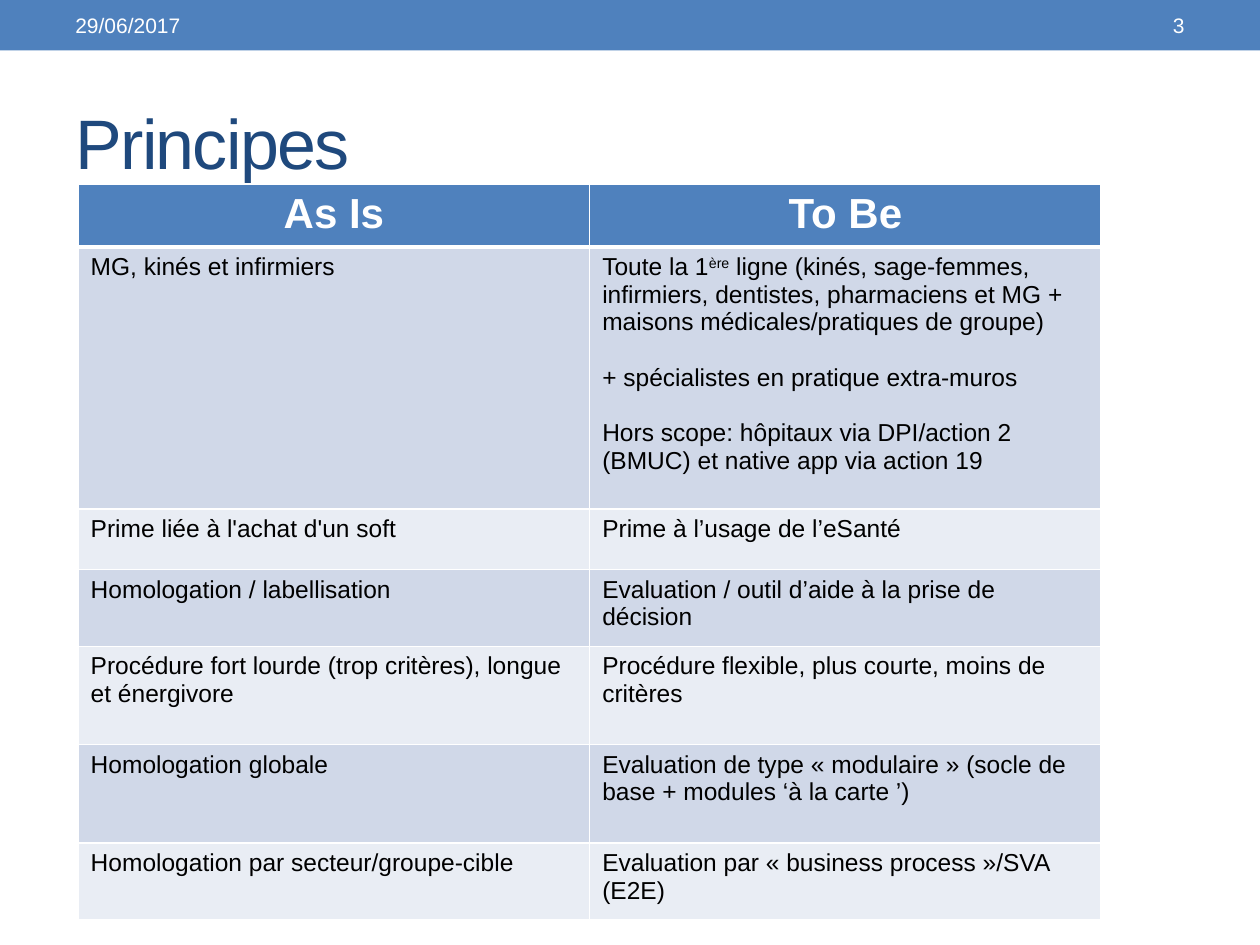
import pptx
import pptx.util
import pptx.dml.color
import pptx.enum.shapes
import pptx.enum.text
import pptx.oxml
import pptx.oxml.ns
from dataclasses import dataclass

Inches = pptx.util.Inches
Pt = pptx.util.Pt
Align = pptx.enum.text.PP_ALIGN
Anchor = pptx.enum.text.MSO_ANCHOR


@dataclass(frozen=True)
class Theme:
    font: str = "Arial"
    blue: str = "4F81BD"
    navy: str = "1F497D"
    white: str = "FFFFFF"
    black: str = "000000"
    bands: tuple = ("D0D8E8", "E9EDF4")
    title: int = 40
    head: int = 24
    body: int = 14
    small: int = 12
    gap: int = 16  # space between paragraphs of a cell


theme = Theme()

HEADS = ("As Is", "To Be")
# A cell is a list of paragraphs; a tuple is text, raised text, text
ROWS = [
    (["MG, kinés et infirmiers"],
     [("Toute la 1", "ère", " ligne (kinés, sage-femmes, infirmiers, dentistes, "
       "pharmaciens et MG + maisons médicales/pratiques de groupe)"),
      "+ spécialistes en pratique extra-muros",
      "Hors scope: hôpitaux via DPI/action 2 (BMUC) et native app via action 19"]),
    (["Prime liée à l'achat d'un soft"], ["Prime à l’usage de l’eSanté"]),
    (["Homologation / labellisation"],
     ["Evaluation / outil d’aide à la prise de décision"]),
    (["Procédure fort lourde (trop critères), longue et énergivore"],
     ["Procédure flexible, plus courte, moins de critères"]),
    (["Homologation globale"],
     ["Evaluation de type « modulaire » (socle de base + modules ‘à la carte ’)"]),
    (["Homologation par secteur/groupe-cible"],
     ["Evaluation par « business process »/SVA (E2E)"]),
]
HEIGHTS = (0.49, 2.08, 0.48, 0.61, 0.78, 0.78, 0.61)


def rgb(code):
    return pptx.dml.color.RGBColor.from_string(code)


def paint(part, code):
    part.fill.solid()
    part.fill.fore_color.rgb = rgb(code)


def style(run, size, color, bold=False):
    for key, val in {"name": theme.font, "size": Pt(size), "bold": bold}.items():
        setattr(run.font, key, val)
    run.font.color.rgb = rgb(color)


def label(slide, box, text, align):
    """Small white text in the top band."""
    frame = slide.shapes.add_textbox(*map(Inches, box)).text_frame
    frame.word_wrap = True
    frame.vertical_anchor = Anchor.MIDDLE
    para = frame.paragraphs[0]
    para.alignment = align
    run = para.add_run()
    run.text = text
    style(run, theme.small, theme.white)


def banner(slide, box, date, num):
    """Band with the date at left and the page number at right."""
    left, top, width, height = box
    band = slide.shapes.add_shape(
        pptx.enum.shapes.MSO_SHAPE.RECTANGLE, *map(Inches, box))
    band.shadow.inherit = False
    paint(band, theme.blue)
    band.line.fill.background()
    side, inset = 0.5, 0.02
    tall = height - 2 * inset
    label(slide, (left + side, top + inset, 3.17, tall), date, Align.LEFT)
    label(slide, (left + width - side - 1.17, top + inset, 1.17, tall),
          num, Align.RIGHT)


def heading(slide, box, text):
    """Slide title in its placeholder."""
    title = slide.shapes.title
    for key, val in zip(("left", "top", "width", "height"), box):
        setattr(title, key, Inches(val))
    frame = title.text_frame
    frame.auto_size = pptx.enum.text.MSO_AUTO_SIZE.NONE
    frame.vertical_anchor = Anchor.MIDDLE
    para = frame.paragraphs[0]
    para.alignment = Align.LEFT
    run = para.add_run()
    run.text = text
    style(run, theme.title, theme.navy)
    run.font._element.set("spc", "-100")


def border(cell, top, low):
    """White lines round a cell, with widths in points."""
    props = cell._tc.get_or_add_tcPr()
    space = pptx.oxml.ns.nsdecls("a")
    sides = {"L": 1, "R": 1, "T": top, "B": low}
    for spot, (side, width) in enumerate(sides.items()):
        props.insert(spot, pptx.oxml.parse_xml(
            f'<a:ln{side} {space} w="{Pt(width)}"><a:solidFill>'
            f'<a:srgbClr val="{theme.white}"/></a:solidFill></a:ln{side}>'))


def write(cell, paras, size, color, bold=False, align=Align.LEFT):
    frame = cell.text_frame
    for spot, text in enumerate(paras):
        para = frame.add_paragraph() if spot else frame.paragraphs[0]
        para.alignment = align
        if spot:
            para.space_before = Pt(theme.gap)
        bits = text if isinstance(text, tuple) else (text,)
        for turn, bit in enumerate(bits):
            run = para.add_run()
            run.text = bit
            style(run, size, color, bold)
            if turn == 1:
                run.font._element.set("baseline", "30000")


def compare(slide, box):
    """Two-column table: a header, then rows in alternating bands."""
    grid = slide.shapes.add_table(
        len(ROWS) + 1, len(HEADS), *map(Inches, box)).table
    for col in grid.columns:
        col.width = Inches(box[2] / len(HEADS))
    for row, tall in zip(grid.rows, HEIGHTS):
        row.height = Inches(tall)
    for spot, text in enumerate(HEADS):
        cell = grid.cell(0, spot)
        paint(cell, theme.blue)
        border(cell, 1, 3)
        write(cell, [text], theme.head, theme.white, True, Align.CENTER)
    for line, row in enumerate(ROWS, 1):
        for spot, paras in enumerate(row):
            cell = grid.cell(line, spot)
            paint(cell, theme.bands[(line - 1) % 2])
            border(cell, 3 if line == 1 else 1, 1)
            write(cell, paras, theme.body, theme.black)


def main():
    deck = pptx.Presentation()
    deck.slide_width, deck.slide_height = Inches(10), Inches(7.5)
    slide = deck.slides.add_slide(deck.slide_layouts[5])
    banner(slide, (0, 0, 10, 0.4), "29/06/2017", "3")
    heading(slide, (0.5, 0.58, 9, 1.08), "Principes")
    compare(slide, (0.62, 1.46, 8.12, sum(HEIGHTS)))
    deck.save("out.pptx")


if __name__ == "__main__":
    main()
